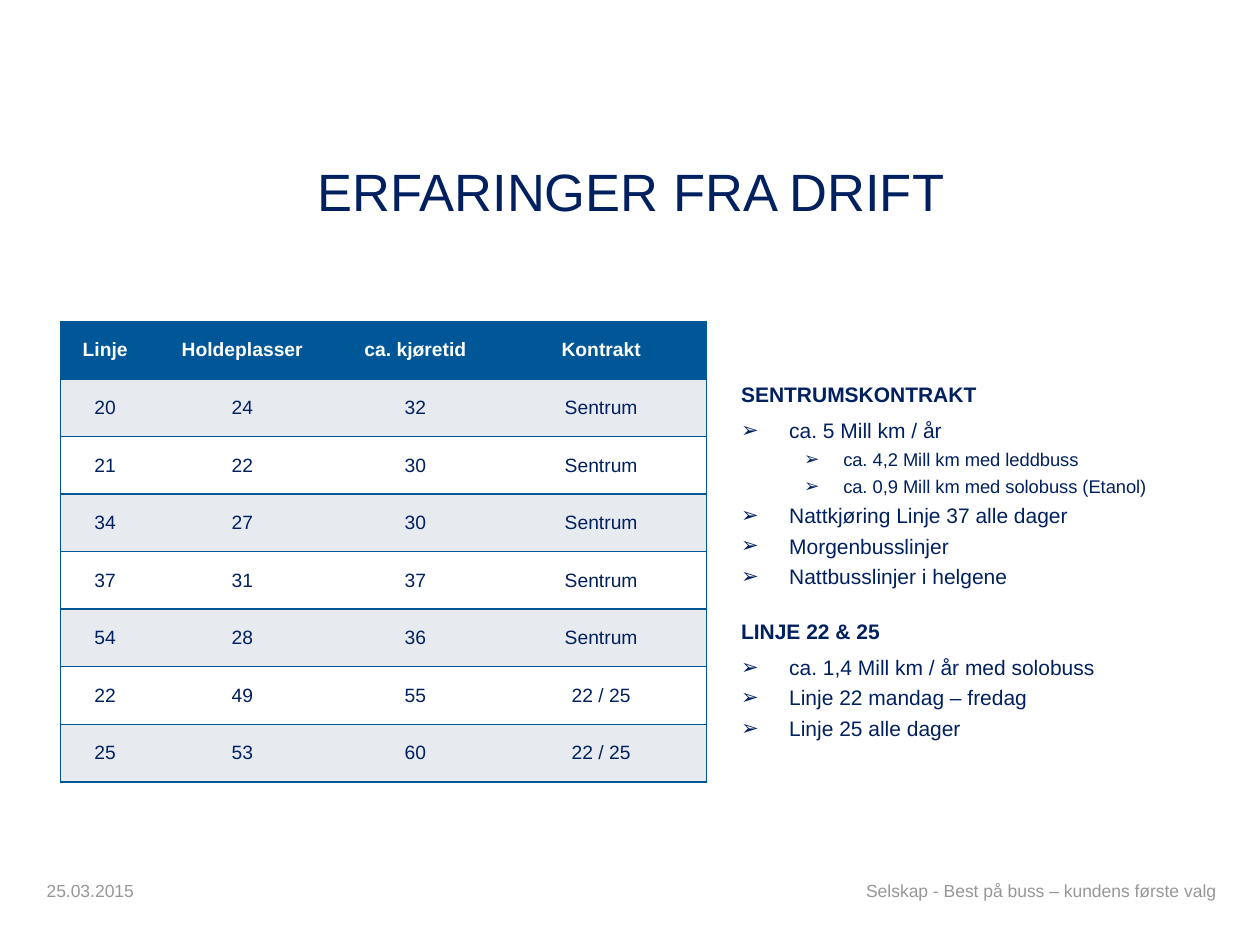
from collections import namedtuple

from lxml.etree import SubElement
from pptx import Presentation
from pptx.dml.color import RGBColor
from pptx.enum.text import MSO_ANCHOR, PP_ALIGN
from pptx.oxml.ns import qn
from pptx.util import Cm, Pt

Box = namedtuple("Box", "left top width height")

FONT = "Arial"
NAVY = "002060"
BLUE = "005798"
GREY = "979797"
PALE = "E7EAEF"
WHITE = "FFFFFF"

COLUMN_WIDTHS = [1.8, 3.73, 3.25, 4.24]
ROUTES = [
    ["Linje", "Holdeplasser", "ca. kjøretid", "Kontrakt"],
    ["20", "24", "32", "Sentrum"],
    ["21", "22", "30", "Sentrum"],
    ["34", "27", "30", "Sentrum"],
    ["37", "31", "37", "Sentrum"],
    ["54", "28", "36", "Sentrum"],
    ["22", "49", "55", "22 / 25"],
    ["25", "53", "60", "22 / 25"],
]
CONTRACTS = [
    ("SENTRUMSKONTRAKT", [
        (0, "ca. 5 Mill km / år"),
        (1, "ca. 4,2 Mill km med leddbuss"),
        (1, "ca. 0,9 Mill km med solobuss (Etanol)"),
        (0, "Nattkjøring Linje 37 alle dager"),
        (0, "Morgenbusslinjer"),
        (0, "Nattbusslinjer i helgene"),
    ]),
    ("LINJE 22 & 25", [
        (0, "ca. 1,4 Mill km / år med solobuss"),
        (0, "Linje 22 mandag – fredag"),
        (0, "Linje 25 alle dager"),
    ]),
]


def colour(value):
    return RGBColor.from_string(value)


def add_span(para, text, size, shade, bold=False):
    span = para.add_run()
    span.text = text
    span.font.name = FONT
    span.font.size = Pt(size)
    span.font.bold = bold
    span.font.color.rgb = colour(shade)


def add_frame(page, box, left_inset, right_inset, anchor=MSO_ANCHOR.TOP):
    frame = page.shapes.add_textbox(*map(Cm, box)).text_frame
    frame.word_wrap = True
    frame.vertical_anchor = anchor
    frame.margin_left, frame.margin_right = Cm(left_inset), Cm(right_inset)
    frame.margin_top = frame.margin_bottom = Cm(0.13)
    return frame


def add_title(page, box, text):
    para = add_frame(page, box, 1.35, 1.35).paragraphs[0]
    para.alignment = PP_ALIGN.CENTER
    para.line_spacing = 0.85
    add_span(para, text, 30, NAVY)


def add_footer(page, box, date, slogan):
    date_box = box._replace(width=5.64)
    slogan_width = 7.52
    slogan_box = box._replace(left=box.left + box.width - slogan_width, width=slogan_width)
    date_para = add_frame(page, date_box, 0, 0.25, MSO_ANCHOR.MIDDLE).paragraphs[0]
    add_span(date_para, date, 10, GREY)
    slogan_para = add_frame(page, slogan_box, 0.25, 0, MSO_ANCHOR.MIDDLE).paragraphs[0]
    slogan_para.alignment = PP_ALIGN.RIGHT
    add_span(slogan_para, slogan, 10, GREY)


def set_borders(cell, visible_sides):
    properties = cell._tc.get_or_add_tcPr()
    for side in "LRTB":
        line = SubElement(properties, qn(f"a:ln{side}"), w=str(Pt(1)))
        if side in visible_sides:
            fill = SubElement(line, qn("a:solidFill"))
            SubElement(fill, qn("a:srgbClr"), val=BLUE)
        else:
            SubElement(line, qn("a:noFill"))


def style_cell(cell, text, fill, shade, bold, sides):
    set_borders(cell, sides)
    cell.fill.solid()
    cell.fill.fore_color.rgb = colour(fill)
    cell.vertical_anchor = MSO_ANCHOR.MIDDLE
    cell.margin_left = cell.margin_right = Cm(0.25)
    cell.margin_top = cell.margin_bottom = Cm(0.18)
    para = cell.text_frame.paragraphs[0]
    para.alignment = PP_ALIGN.CENTER
    add_span(para, text, 11, shade, bold)


def add_route_table(page, box, rows):
    table = page.shapes.add_table(len(rows), len(rows[0]), *map(Cm, box)).table
    for column, width in zip(table.columns, COLUMN_WIDTHS):
        column.width = Cm(width)
    for r, values in enumerate(rows):
        table.rows[r].height = Cm(box.height / len(rows))
        header = r == 0
        fill = BLUE if header else (WHITE, PALE)[r % 2]
        for c, text in enumerate(values):
            sides = "TB" + "L" * (c == 0) + "R" * (c == len(values) - 1)
            style_cell(table.cell(r, c), text, fill, WHITE if header else NAVY, header, sides)


def set_bullet(para, level):
    margin, hanging = [(0.97, 0.97), (2.06, 0.79)][level]
    para.level = level
    properties = para._p.get_or_add_pPr()
    properties.set("marL", str(Cm(margin)))
    properties.set("indent", str(-Cm(hanging)))
    SubElement(properties, qn("a:buFont"), typeface=FONT)
    SubElement(properties, qn("a:buChar"), char="➢")


def add_contracts(page, box, contracts):
    frame = add_frame(page, box, 1.35, 1.35)
    for number, (heading, points) in enumerate(contracts):
        para = frame.add_paragraph() if number else frame.paragraphs[0]
        if number:
            para.space_before = Pt(14)
        para.space_after = Pt(6)
        add_span(para, heading, 12, NAVY, True)
        for level, text in points:
            para = frame.add_paragraph()
            set_bullet(para, level)
            para.space_after = Pt(3)
            add_span(para, text, (12, 10.5)[level], NAVY)


def main():
    deck = Presentation()
    deck.slide_width, deck.slide_height = Cm(25.4), Cm(19.05)
    page = deck.slides.add_slide(deck.slide_layouts[6])
    add_title(page, Box(0.94, 3.28, 23.57, 3.43), "ERFARINGER FRA DRIFT")
    add_footer(page, Box(0.94, 16.84, 23.57, 2.21), "25.03.2015",
               "Selskap - Best på buss – kundens første valg")
    add_route_table(page, Box(1.22, 6.48, sum(COLUMN_WIDTHS), 9.28), ROUTES)
    add_contracts(page, Box(13.59, 7.57, 11.63, 8.2), CONTRACTS)
    deck.save("out.pptx")


if __name__ == "__main__":
    main()
